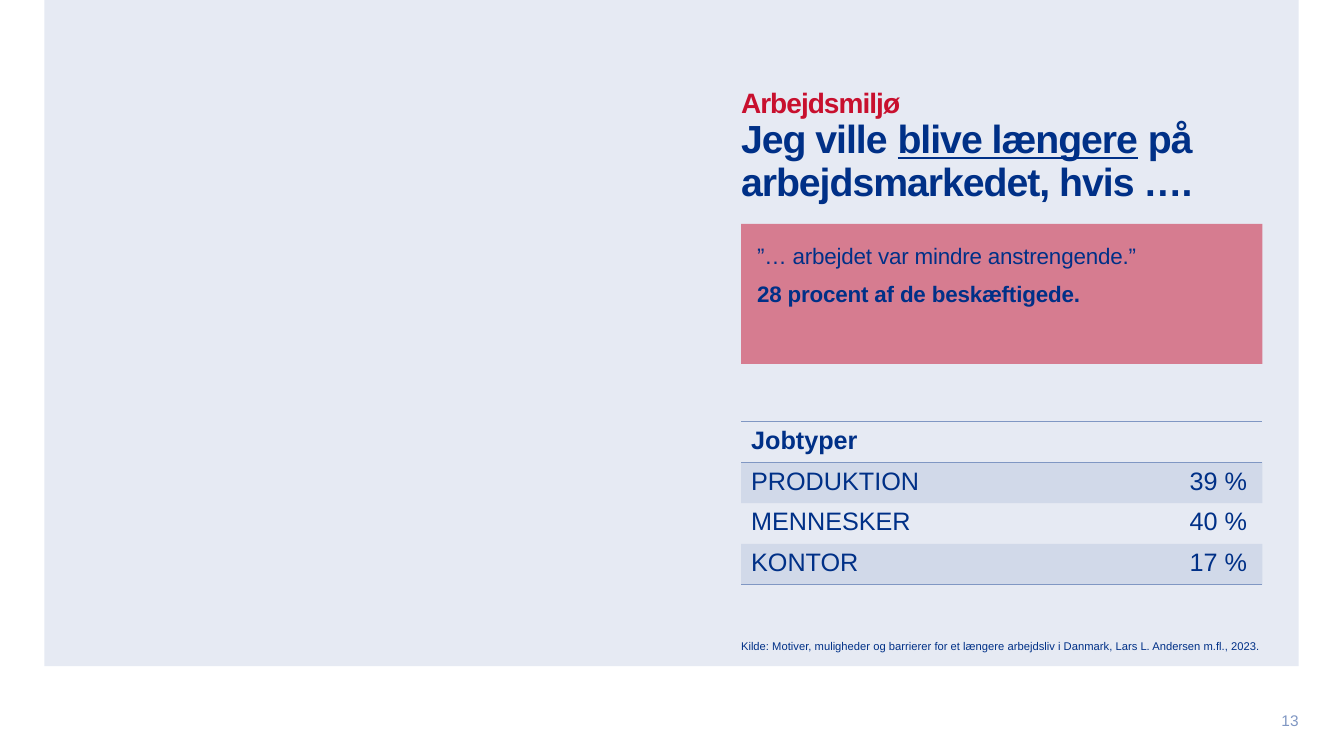
from dataclasses import dataclass

from lxml.etree import SubElement
from pptx import Presentation
from pptx.dml.color import RGBColor
from pptx.enum.shapes import MSO_SHAPE
from pptx.enum.text import MSO_ANCHOR, MSO_AUTO_SIZE, PP_ALIGN
from pptx.oxml.ns import qn
from pptx.util import Inches, Pt


@dataclass(frozen=True)
class Theme:
    font: str = "Arial"
    navy: str = "003087"
    red: str = "C8102E"
    steel: str = "8097C3"
    panel: str = "E6EAF3"
    headline: int = 28
    kicker: int = 20
    table: int = 18
    quote: int = 16
    number: int = 11
    source: int = 8


theme = Theme()
NO_TABLE_STYLE = "{2D5ABB26-0587-4C30-8999-92F81FD0307C}"


def add_run(paragraph, text, size, color=theme.navy, bold=False, underline=False, spacing=0):
    """Append a styled run; spacing is in points between letters."""
    run = paragraph.add_run()
    run.text = text
    font = run.font
    font.name, font.size = theme.font, Pt(size)
    font.bold, font.underline = bold, underline
    font.color.rgb = RGBColor.from_string(color)
    if spacing:
        font._element.set("spc", str(round(spacing * 100)))


def fill_solid(fill, color, opacity=100):
    fill.solid()
    fill.fore_color.rgb = RGBColor.from_string(color)
    if opacity < 100:
        rgb = fill._xPr.find(qn("a:solidFill")).find(qn("a:srgbClr"))
        SubElement(rgb, qn("a:alpha")).set("val", str(opacity * 1000))


prs = Presentation()
prs.slide_width, prs.slide_height = Inches(13.33), Inches(7.5)
slide = prs.slides.add_slide(prs.slide_layouts[5])
shapes = slide.shapes
left, width = Inches(7.35), Inches(5.17)

# Background panel, behind the title
panel = shapes.add_shape(MSO_SHAPE.RECTANGLE, Inches(0.44), 0, Inches(12.44), Inches(6.61))
panel.shadow.inherit = False
fill_solid(panel.fill, theme.panel)
panel.line.fill.background()
title = shapes.title
panel._element.addnext(title._element)

# Title
title.left, title.top, title.width, title.height = left, Inches(0.89), width, Inches(0.44)
heading = title.text_frame
heading.word_wrap = True
heading.auto_size = MSO_AUTO_SIZE.NONE
heading.vertical_anchor = MSO_ANCHOR.TOP
heading.margin_left = heading.margin_right = heading.margin_top = heading.margin_bottom = 0
line = heading.paragraphs[0]
line.alignment = PP_ALIGN.LEFT
line.line_spacing = 0.9
add_run(line, "Arbejdsmiljø", theme.kicker, theme.red, bold=True, spacing=-0.7)
line.add_line_break()
for text, underline in (("Jeg ville ", False), ("blive længere", True), (" på ", False)):
    add_run(line, text, theme.headline, bold=True, underline=underline, spacing=-0.7)
line.add_line_break()
add_run(line, "arbejdsmarkedet, hvis ….", theme.headline, bold=True, spacing=-0.7)

# Quote
quote_box = shapes.add_shape(MSO_SHAPE.RECTANGLE, left, Inches(2.22), width, Inches(1.39))
quote_box.shadow.inherit = False
fill_solid(quote_box.fill, theme.red, opacity=50)
quote_box.line.fill.background()
quote = quote_box.text_frame
quote.word_wrap = True
quote.vertical_anchor = MSO_ANCHOR.TOP
quote.margin_left = quote.margin_right = quote.margin_top = quote.margin_bottom = Inches(0.16)
statements = (("”… arbejdet var mindre anstrengende.”", False),
              ("28 procent af de beskæftigede.", True))
for i, (text, bold) in enumerate(statements):
    paragraph = quote.add_paragraph() if i else quote.paragraphs[0]
    paragraph.alignment = PP_ALIGN.LEFT
    paragraph.line_spacing = 1.1
    paragraph.space_after = Pt(6)
    add_run(paragraph, text, theme.quote, bold=bold, spacing=-0.1)

# Job types
job_types = (("Jobtyper", ""), ("PRODUKTION", "39 %"), ("MENNESKER", "40 %"), ("KONTOR", "17 %"))
ruled_sides = {0: ("a:lnT", "a:lnB"), len(job_types) - 1: ("a:lnB",)}
frame = shapes.add_table(len(job_types), 2, left, Inches(4.18), width, Inches(1.62))
table = frame.table
table.first_row = table.horz_banding = False
table._tbl.tblPr.find(qn("a:tableStyleId")).text = NO_TABLE_STYLE
table.columns[0].width, table.columns[1].width = Inches(4.35), Inches(0.82)
for r, row in enumerate(job_types):
    for c, text in enumerate(row):
        cell = table.cell(r, c)
        for side in ruled_sides.get(r, ()):
            border = SubElement(cell._tc.get_or_add_tcPr(), qn(side), w=str(Pt(1)))
            color = SubElement(SubElement(border, qn("a:solidFill")), qn("a:srgbClr"))
            color.set("val", theme.steel)
        if r % 2:
            fill_solid(cell.fill, theme.steel, opacity=20)
        else:
            cell.fill.background()
        if text:
            add_run(cell.text_frame.paragraphs[0], text, theme.table, bold=r == 0)

# Source and page number
captions = (
    ("Kilde: Motiver, muligheder og barrierer for et længere arbejdsliv i Danmark, "
     "Lars L. Andersen m.fl., 2023.",
     (7.35, 6.34, 5.74, 0.21), theme.source, theme.navy, PP_ALIGN.LEFT, MSO_ANCHOR.TOP, 1.04),
    ("13", (12.44, 7.08, 0.44, 0.14), theme.number, theme.steel, PP_ALIGN.RIGHT,
     MSO_ANCHOR.MIDDLE, 1.0),
)
for text, place, size, color, alignment, anchor, spacing in captions:
    caption = shapes.add_textbox(*map(Inches, place)).text_frame
    caption.word_wrap = True
    caption.vertical_anchor = anchor
    caption.margin_left = caption.margin_right = caption.margin_top = caption.margin_bottom = 0
    paragraph = caption.paragraphs[0]
    paragraph.alignment = alignment
    paragraph.line_spacing = spacing
    add_run(paragraph, text, size, color)

prs.save("out.pptx")
